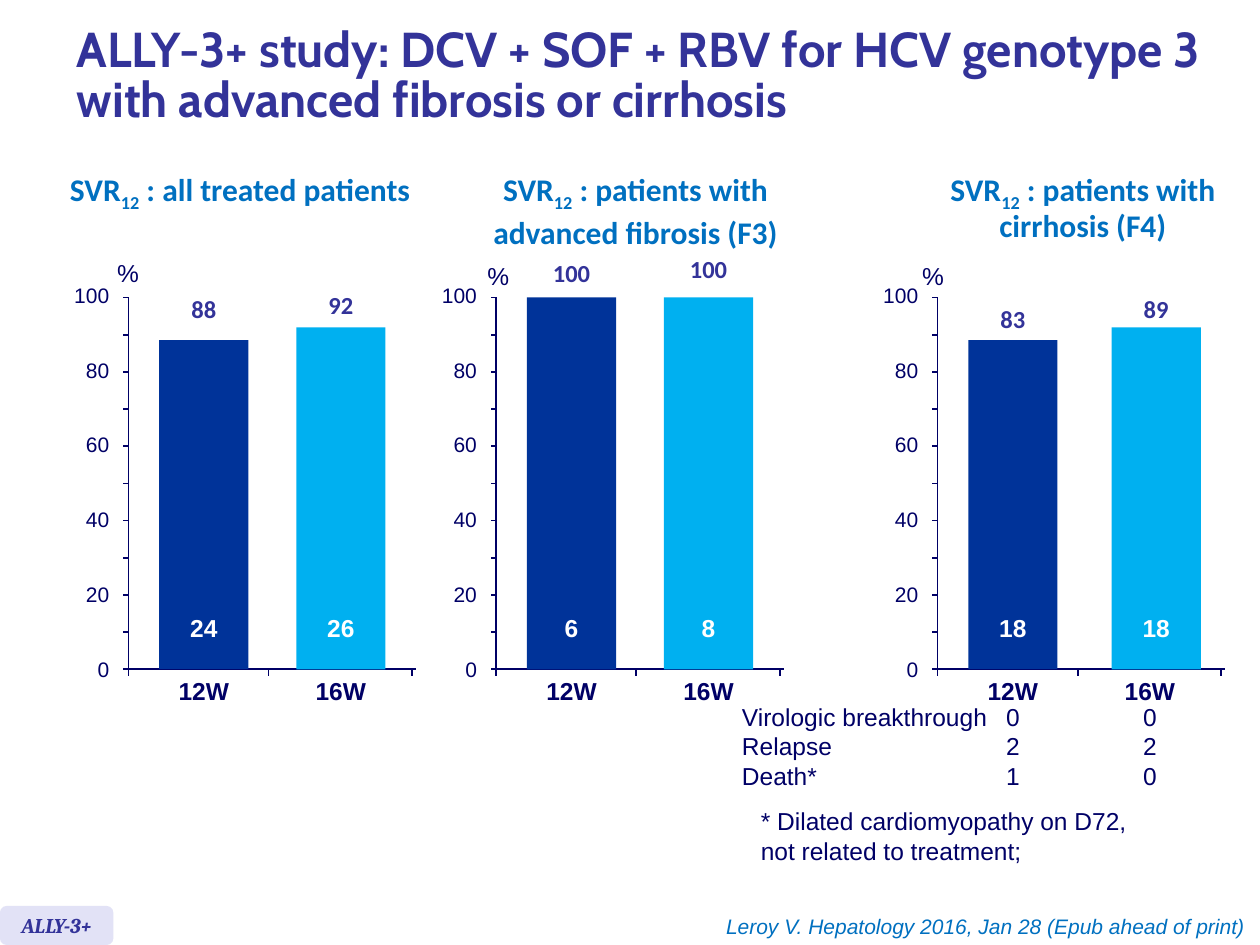
from dataclasses import dataclass

from lxml import etree
from pptx import Presentation
from pptx import util as u
from pptx.dml.color import RGBColor
from pptx.enum import shapes, text

Pt = u.Pt
A_NS = "http://schemas.openxmlformats.org/drawingml/2006/main"
LEFT, CENTER, RIGHT = text.PP_ALIGN.LEFT, text.PP_ALIGN.CENTER, text.PP_ALIGN.RIGHT
TOP, MIDDLE, BOTTOM = text.MSO_ANCHOR.TOP, text.MSO_ANCHOR.MIDDLE, text.MSO_ANCHOR.BOTTOM


@dataclass
class Theme:
    ink: str = "000066"
    title: str = "333399"
    accent: str = "0070C0"
    tag: str = "E2E2F6"
    white: str = "FFFFFF"
    bars: tuple = ("003399", "00B0F0")
    title_size: float = 28
    heading_size: float = 18
    body_size: float = 14
    small_size: float = 12
    body_font: str = "Arial"
    heading_font: str = "Calibri"
    title_font: str = "Cabin"
    tag_font: str = "Cambria"


def write_text(tf, paragraphs, *, size, color, font, bold=False, italic=False,
               align=LEFT, spacing=None, before=0):
    for i, content in enumerate(paragraphs):
        p = tf.paragraphs[0] if i == 0 else tf.add_paragraph()
        p.alignment = align
        if spacing:
            p.line_spacing = spacing
        if i and before:
            p.space_before = Pt(before)
        for n, piece in enumerate(content.split("|")):
            for k, line in enumerate(piece.split("\n")):
                if k:
                    p.add_line_break()
                r = p.add_run()
                r.text = line
                r.font.size = Pt(size)
                r.font.name = font
                r.font.bold = bold
                r.font.italic = italic
                r.font.color.rgb = RGBColor.from_string(color)
                if n % 2:
                    r._r.get_or_add_rPr().set("baseline", "-25000")


class SlideBuilder:
    def __init__(self, slide, theme):
        self.slide = slide
        self.theme = theme
        self.target = slide.shapes

    def start_group(self):
        self.target = self.slide.shapes.add_group_shape().shapes

    def end_group(self):
        self.target = self.slide.shapes

    def title(self, content, x, y, w, h):
        t = self.theme
        sp = self.slide.shapes.title
        sp.left, sp.top, sp.width, sp.height = Pt(x), Pt(y), Pt(w), Pt(h)
        tf = sp.text_frame
        tf.auto_size = text.MSO_AUTO_SIZE.NONE
        tf.vertical_anchor = MIDDLE
        write_text(tf, [content], size=t.title_size, color=t.title,
                   font=t.title_font, bold=True, spacing=0.85)

    def label(self, content, x, y, w, h, *, wrap=False, inset=True, anchor=TOP, **style):
        t = self.theme
        tf = self.target.add_textbox(Pt(x), Pt(y), Pt(w), Pt(h)).text_frame
        tf.word_wrap = wrap
        tf.vertical_anchor = anchor
        tf.auto_size = (text.MSO_AUTO_SIZE.SHAPE_TO_FIT_TEXT if anchor == TOP
                        else text.MSO_AUTO_SIZE.NONE)
        if not inset:
            tf.margin_left = tf.margin_right = tf.margin_top = tf.margin_bottom = 0
        paragraphs = [content] if isinstance(content, str) else content
        defaults = dict(size=t.body_size, color=t.ink, font=t.body_font)
        write_text(tf, paragraphs, **{**defaults, **style})

    def box(self, kind, x, y, w, h, fill):
        sp = self.target.add_shape(kind, Pt(x), Pt(y), Pt(w), Pt(h))
        sp.shadow.inherit = False
        sp.fill.solid()
        sp.fill.fore_color.rgb = RGBColor.from_string(fill)
        sp.line.fill.background()
        return sp

    def line(self, x1, y1, x2, y2):
        cx = self.target.add_connector(shapes.MSO_CONNECTOR.STRAIGHT,
                                       Pt(x1), Pt(y1), Pt(x2), Pt(y2))
        cx.line.color.rgb = RGBColor.from_string(self.theme.ink)
        cx.line.width = Pt(1)
        etree.SubElement(cx._element.spPr, f"{{{A_NS}}}effectLst")

    def tag(self, content, x, y, w, h):
        t = self.theme
        sp = self.box(shapes.MSO_SHAPE.ROUNDED_RECTANGLE, x, y, w, h, t.tag)
        tf = sp.text_frame
        tf.word_wrap = False
        tf.vertical_anchor = MIDDLE
        write_text(tf, [content], size=t.small_size, color=t.title, font=t.tag_font,
                   bold=True, italic=True, align=CENTER)


AXIS_TOP, AXIS_BASE = 170, 382.5
AXIS_LENGTH = 164.2
BAR_WIDTH = 51
CENTERS = (43, 121.3)


def draw_axes(b, x):
    t = b.theme
    for i in range(6):
        value = str(20 * i)
        w = 6.7 * len(value)
        b.label(value, x - 11 - w, AXIS_BASE - 7.4 - 42.75 * i, w, 14.4,
                inset=False, size=t.small_size)
    b.line(x, AXIS_TOP, x, AXIS_BASE)
    b.line(x, AXIS_BASE, x + AXIS_LENGTH, AXIS_BASE)
    for i in range(11):
        y = AXIS_BASE - i * (AXIS_BASE - AXIS_TOP) / 10
        b.line(x - 3, y, x, y)
    for offset in (0, 80, 162):
        b.line(x + offset, AXIS_BASE, x + offset, AXIS_BASE + 3.6)


def draw_bar(b, x, center, shift, name, fill, level, value, value_top, count):
    t = b.theme
    mid = x + center + shift
    height = (AXIS_BASE - AXIS_TOP) * level / 100
    b.box(shapes.MSO_SHAPE.RECTANGLE, mid - BAR_WIDTH / 2, AXIS_BASE - height,
          BAR_WIDTH, height, fill)
    b.label(value, mid - 21.2, value_top, 42.4, 17.3, wrap=True, inset=False,
            color=t.title, font=t.heading_font, bold=True, align=CENTER)
    b.label(count, mid - 22, 329.8, 44, 41, wrap=True, anchor=BOTTOM,
            color=t.white, bold=True, align=CENTER)
    b.label(name, x + center - 22, 383, 44, 24.5, bold=True, align=CENTER)


PANELS = [
    dict(x=73.5, heading=["SVR|12| : all treated patients"], box=(31, 212.4, 26),
         percent=(59.8, 144), shifts=(0, 0),
         bars=[(88.5, "88", 167.8, "24"), (92, "92", 165.6, "26")]),
    dict(x=283.6, heading=["SVR|12| : patients with", "advanced fibrosis (F3)"],
         box=(274.3, 177.8, 48.2), percent=(271.4, 145.4), shifts=(0, 0),
         bars=[(100, "100", 147.6, "6"), (100, "100", 145.4, "8")]),
    dict(x=535.8, heading=["SVR|12| : patients with\ncirrhosis (F4)"],
         box=(534.2, 169.2, 44), percent=(519.8, 145.4), shifts=(0, 3.6),
         bars=[(88.5, "83", 173.5, "18"), (92, "89", 167.8, "18")]),
]
OUTCOMES = [("Virologic breakthrough", 157, "0", "0"),
            ("Relapse", 66.2, "2", "2"),
            ("Death*", 57.6, "1", "0")]


def draw_panel(b, panel):
    t = b.theme
    x = panel["x"]
    left, width, height = panel["box"]
    b.label(panel["heading"], left, 100, width, height, size=t.heading_size,
            color=t.accent, font=t.heading_font, bold=True, align=CENTER,
            spacing=Pt(18), before=3.6)
    b.start_group()
    draw_axes(b, x)
    for center, shift, name, fill, bar in zip(CENTERS, panel["shifts"], ("12W", "16W"),
                                              t.bars, panel["bars"]):
        draw_bar(b, x, center, shift, name, fill, *bar)
    b.end_group()
    b.label("%", *panel["percent"], 27.4, 24.5)


def draw_outcomes(b, x):
    for i, (name, width, *counts) in enumerate(OUTCOMES):
        y = 397.4 + 17 * i
        b.label(name, 416.9, y, width, 24.5)
        for center, count in zip(CENTERS, counts):
            b.label(count, x + center - 11.2, y, 22.4, 24.5, align=CENTER)


def main():
    prs = Presentation()
    prs.slide_width, prs.slide_height = Pt(720), Pt(540)
    b = SlideBuilder(prs.slides.add_slide(prs.slide_layouts[5]), Theme())
    t = b.theme
    b.title("ALLY-3+ study: DCV + SOF + RBV for HCV genotype 3 "
            "with advanced fibrosis or cirrhosis", 36.7, 5.8, 657.4, 77)
    b.tag("ALLY-3+", 0, 517.7, 64.8, 22.3)
    b.label("Leroy V. Hepatology 2016, Jan 28 (Epub ahead of print)",
            405.4, 518.4, 313.2, 21.6, size=t.small_size, color=t.accent,
            italic=True, align=RIGHT)
    for panel in PANELS:
        draw_panel(b, panel)
    draw_outcomes(b, PANELS[-1]["x"])
    b.label("* Dilated cardiomyopathy on D72, not related to treatment;",
            427.7, 457.2, 232.6, 41, wrap=True)
    prs.save("out.pptx")


if __name__ == "__main__":
    main()
